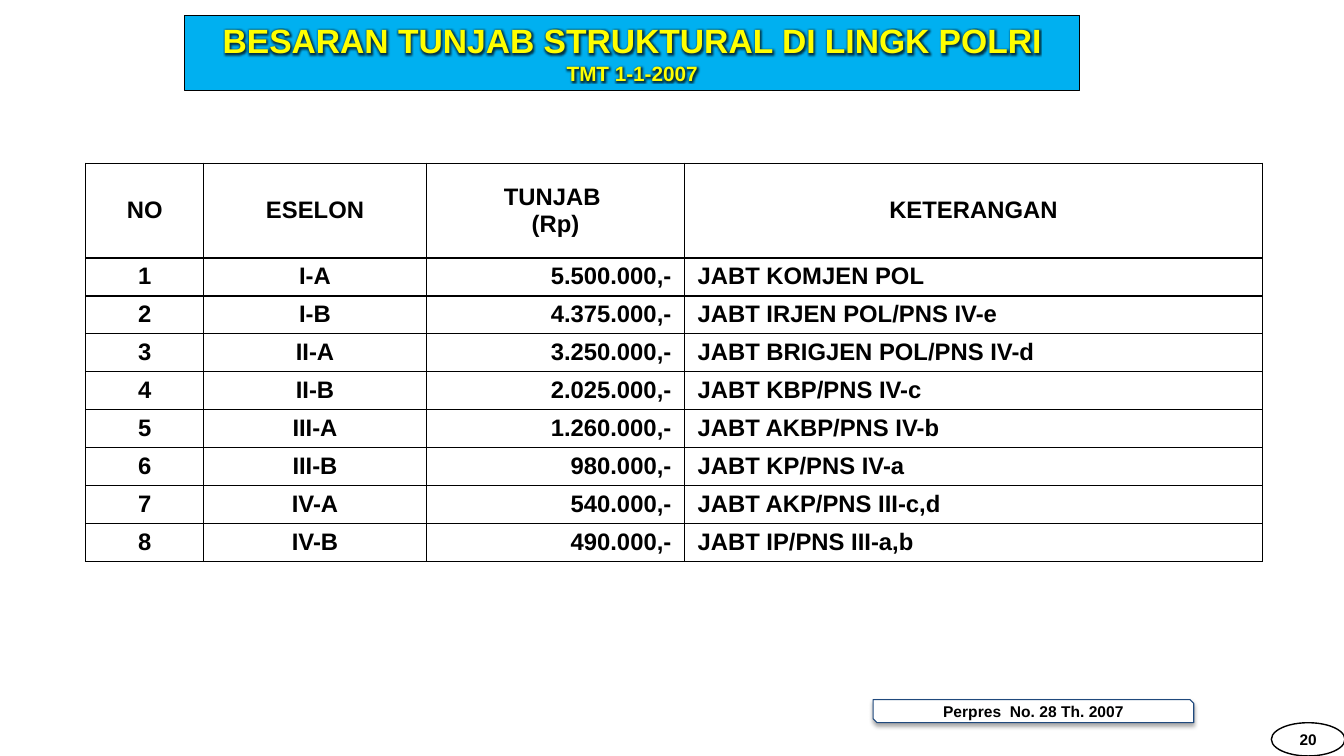
import pptx
import pptx.util
import pptx.dml.color
import pptx.enum.shapes
import pptx.enum.text
import pptx.oxml
import pptx.oxml.ns

Inches = pptx.util.Inches
ALIGN = pptx.enum.text.PP_ALIGN
ANCHOR = pptx.enum.text.MSO_ANCHOR
SHAPE = pptx.enum.shapes.MSO_SHAPE

COLORS = {"text": "000000", "paper": "FFFFFF", "banner": "00B0F0",
          "title": "FFFF00", "source_line": "1F497D"}
FONT = "Arial"

TITLE = [("BESARAN TUNJAB STRUKTURAL DI LINGK POLRI", 24), ("TMT 1-1-2007", 14.8)]
HEADER = ("NO", "ESELON", "TUNJAB \n(Rp)", "KETERANGAN")
ALLOWANCES = [
    ("I-A", "5.500.000,-", "JABT KOMJEN POL"),
    ("I-B", "4.375.000,-", "JABT IRJEN POL/PNS IV-e"),
    ("II-A", "3.250.000,-", "JABT BRIGJEN POL/PNS IV-d"),
    ("II-B", "2.025.000,-", "JABT KBP/PNS IV-c"),
    ("III-A", "1.260.000,-", "JABT AKBP/PNS IV-b"),
    ("III-B", "980.000,-", "JABT KP/PNS IV-a"),
    ("IV-A", "540.000,-", "JABT AKP/PNS III-c,d"),
    ("IV-B", "490.000,-", "JABT IP/PNS III-a,b"),
]
SOURCE = "Perpres  No. 28 Th. 2007"
PAGE = "20"

COLUMN_WIDTHS = (1.17, 2.21, 2.56, 5.73)
COLUMN_ALIGNS = (ALIGN.CENTER, ALIGN.CENTER, ALIGN.RIGHT, ALIGN.JUSTIFY)
HEADER_HEIGHT, ROW_HEIGHT = 0.94, 0.376


def rgb(name):
    return pptx.dml.color.RGBColor.from_string(COLORS[name])


def drawing_xml(xml):
    return pptx.oxml.parse_xml(xml.replace(">", " " + pptx.oxml.ns.nsdecls("a") + ">", 1))


def style(paragraph, size, color="text", align=ALIGN.CENTER):
    paragraph.alignment = align
    for run in paragraph.runs:
        run.font.size = pptx.util.Pt(size)
        run.font.bold = True
        run.font.color.rgb = rgb(color)
        run.font.name = FONT


def paint(shape, fill, line, width):
    shape.fill.solid()
    shape.fill.fore_color.rgb = rgb(fill)
    shape.line.color.rgb = rgb(line)
    shape.line.width = pptx.util.Pt(width)


def add_label(slide, kind, box, text, size, line, width):
    label = slide.shapes.add_shape(kind, *map(Inches, box))
    label.shadow.inherit = False
    paint(label, "paper", line, width)
    frame = label.text_frame
    frame.margin_left = frame.margin_right = frame.margin_top = frame.margin_bottom = 0
    frame.vertical_anchor = ANCHOR.MIDDLE
    frame.text = text
    style(frame.paragraphs[0], size)
    return label


def add_title(slide):
    banner = slide.shapes.title
    banner.left, banner.top, banner.width, banner.height = map(Inches, (1.83, 0.15, 8.88, 0.75))
    paint(banner, "banner", "text", 0.75)
    frame = banner.text_frame
    frame.text = "\n".join(text for text, size in TITLE)
    frame.word_wrap = True
    frame.auto_size = pptx.enum.text.MSO_AUTO_SIZE.NONE
    frame.vertical_anchor = ANCHOR.TOP
    for paragraph, (text, size) in zip(frame.paragraphs, TITLE):
        style(paragraph, size, "title")
        for run in paragraph.runs:
            properties = run.font._element
            properties.insert(0, drawing_xml(
                f'<a:ln w="9525"><a:solidFill><a:srgbClr val="{COLORS["title"]}"/></a:solidFill></a:ln>'))
            properties.insert(2, drawing_xml(
                f'<a:effectLst><a:glow rad="38100"><a:srgbClr val="{COLORS["text"]}">'
                '<a:alpha val="70000"/></a:srgbClr></a:glow></a:effectLst>'))


def fill_cell(cell, text, align, anchor):
    cell.text = text
    cell.margin_left = cell.margin_right = Inches(0.13)
    cell.margin_top = cell.margin_bottom = Inches(0.05)
    cell.vertical_anchor = anchor
    cell.fill.solid()
    cell.fill.fore_color.rgb = rgb("paper")
    for paragraph in cell.text_frame.paragraphs:
        style(paragraph, 17, align=align)
    properties = cell._tc.get_or_add_tcPr()
    for position, side in enumerate(("lnL", "lnR", "lnT", "lnB")):
        properties.insert(position, drawing_xml(
            f'<a:{side} w="12700"><a:solidFill><a:srgbClr val="{COLORS["text"]}"/>'
            f'</a:solidFill></a:{side}>'))


def add_allowances(slide):
    rows = [HEADER] + [(str(number), *row) for number, row in enumerate(ALLOWANCES, 1)]
    height = HEADER_HEIGHT + ROW_HEIGHT * len(ALLOWANCES)
    table = slide.shapes.add_table(
        len(rows), len(HEADER), Inches(0.85), Inches(1.62),
        Inches(sum(COLUMN_WIDTHS)), Inches(height)).table
    table.first_row = table.horz_banding = False
    for column, width in zip(table.columns, COLUMN_WIDTHS):
        column.width = Inches(width)
    for r, row in enumerate(rows):
        table.rows[r].height = Inches(ROW_HEIGHT if r else HEADER_HEIGHT)
        for c, text in enumerate(row):
            fill_cell(table.cell(r, c), text,
                      COLUMN_ALIGNS[c] if r else ALIGN.CENTER,
                      ANCHOR.TOP if r else ANCHOR.MIDDLE)


def main():
    deck = pptx.Presentation()
    deck.slide_width, deck.slide_height = Inches(13.33), Inches(7.5)
    slide = deck.slides.add_slide(deck.slide_layouts[5])
    add_allowances(slide)
    source = add_label(slide, SHAPE.SNIP_2_DIAG_RECTANGLE, (8.66, 6.94, 3.18, 0.23),
                       SOURCE, 11.1, "source_line", 0.75)
    effects = source._element.spPr.find(pptx.oxml.ns.qn("a:effectLst"))
    effects.append(drawing_xml(
        '<a:outerShdw blurRad="39370" dist="22860" dir="5400000" rotWithShape="0">'
        f'<a:srgbClr val="{COLORS["text"]}"><a:alpha val="35000"/></a:srgbClr></a:outerShdw>'))
    add_title(slide)
    add_label(slide, SHAPE.OVAL, (12.61, 7.17, 0.73, 0.33), PAGE, 11, "text", 1)
    deck.save("out.pptx")


if __name__ == "__main__":
    main()
